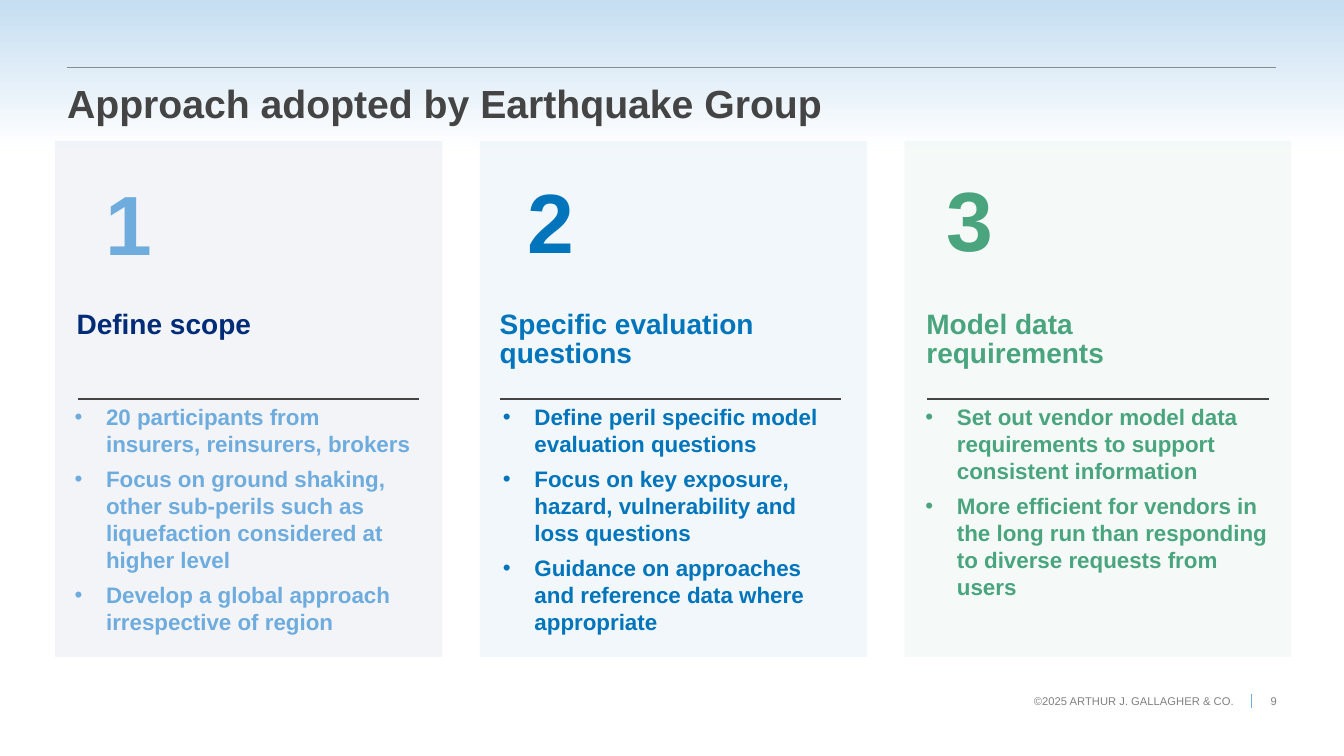
import pptx
import pptx.util
import pptx.dml.color
import pptx.enum.shapes
import pptx.enum.text
import pptx.oxml.ns
from lxml import etree

Pt = pptx.util.Pt
ALIGN = pptx.enum.text.PP_ALIGN
RECTANGLE = pptx.enum.shapes.MSO_SHAPE.RECTANGLE
STRAIGHT = pptx.enum.shapes.MSO_CONNECTOR.STRAIGHT
qn = pptx.oxml.ns.qn
color = pptx.dml.color.RGBColor.from_string

deck = pptx.Presentation()
deck.slide_width, deck.slide_height = Pt(960), Pt(540)
slide = deck.slides.add_slide(deck.slide_layouts[6])


def add_text(box, lines, size, ink, bold=True, align=ALIGN.LEFT, spacing=None, bullets=False, wrap=True):
    """Add a margin-free text box at box = (left, top, width, height), one paragraph per line."""
    frame = slide.shapes.add_textbox(*map(Pt, box)).text_frame
    frame.word_wrap = wrap
    frame.margin_left = frame.margin_top = frame.margin_right = frame.margin_bottom = 0
    for index, line in enumerate(lines):
        paragraph = frame.paragraphs[0] if index == 0 else frame.add_paragraph()
        paragraph.alignment = align
        if spacing:
            paragraph.line_spacing = spacing
        if bullets:
            properties = paragraph._p.get_or_add_pPr()
            properties.set("marL", str(Pt(22.5)))
            properties.set("indent", str(Pt(-22.5)))
            etree.SubElement(properties, qn("a:buFont")).set("typeface", "Arial")
            etree.SubElement(properties, qn("a:buChar")).set("char", "•")
            paragraph.space_after = Pt(6)
        run = paragraph.add_run()
        run.text = line
        run.font.name = "Arial"
        run.font.size = Pt(size)
        run.font.bold = bold
        run.font.color.rgb = color(ink)


def add_rule(x1, y1, x2, y2, ink, weight):
    rule = slide.shapes.add_connector(STRAIGHT, Pt(x1), Pt(y1), Pt(x2), Pt(y2))
    rule.line.color.rgb = color(ink)
    rule.line.width = Pt(weight)
    etree.SubElement(rule._element.spPr, qn("a:effectLst"))


# Sky gradient fading out over the top fifth of the slide
sky = slide.shapes.add_shape(RECTANGLE, 0, 0, Pt(960), Pt(540))
sky.shadow.inherit = False
sky.line.fill.background()
sky.fill.gradient()
sky.fill.gradient_angle = 270
for stop, (position, tint) in zip(sky.fill.gradient_stops, [(0, "C5DEF2"), (0.2, "FFFFFF")]):
    stop.position = position
    stop.color.rgb = color(tint)

# Title and footer
add_rule(48, 48, 911.5, 48, "898D8D", 0.25)
add_text((48, 60.5, 863.5, 38), ["Approach adopted by Earthquake Group"], 28, "444444", spacing=0.9)
add_rule(893.5, 496, 893.5, 506, "6FACDE", 0.5)
add_text((737, 496, 144.5, 9.5), ["©2025 ARTHUR J. GALLAGHER & CO."], 8, "808080",
         bold=False, align=ALIGN.RIGHT, wrap=False)
add_text((902, 496, 10, 9.5), ["9"], 8, "808080", bold=False, align=ALIGN.RIGHT, wrap=False)

# Step cards: card colour, text colour, heading, points,
# number position, heading left and width, points left
steps = [
    ("002C77", "6FACDE", "Define scope",
     ["20 participants from insurers, reinsurers, brokers",
      "Focus on ground shaking, other sub-perils such as liquefaction considered at higher level",
      "Develop a global approach irrespective of region"],
     (55.5, 122.5), (54.75, 252), 53.25),
    ("0075BC", "0075BC", "Specific evaluation questions",
     ["Define peril specific model evaluation questions",
      "Focus on key exposure, hazard, vulnerability and loss questions",
      "Guidance on approaches and reference data where appropriate"],
     (357, 121), (357, 261), 359.25),
    ("4AA57F", "4AA57F", "Model data requirements",
     ["Set out vendor model data requirements to support consistent information",
      "More efficient for vendors in the long run than responding to diverse requests from users"],
     (656, 120), (661.75, 213), 661),
]
for index, (card_ink, text_ink, heading, points, number_at, heading_span, points_left) in enumerate(steps):
    card_left = 39.5 + 303.25 * index
    card = slide.shapes.add_shape(RECTANGLE, Pt(card_left), Pt(100.75), Pt(276.5), Pt(368.5))
    card.shadow.inherit = False
    card.line.fill.background()
    card.fill.solid()
    card.fill.fore_color.rgb = color(card_ink)
    tint = card._element.spPr.find(qn("a:solidFill")).find(qn("a:srgbClr"))
    etree.SubElement(tint, qn("a:alpha")).set("val", "5000")

    heading_left, heading_width = heading_span
    add_text((*number_at, 73.5, 72.75), [str(index + 1)], 60, text_ink, align=ALIGN.CENTER)
    add_text((heading_left, 222.5, heading_width, 42), [heading], 20, card_ink, spacing=0.86)
    rule_left = heading_left + (0 if index == 1 else 0.65)
    add_rule(rule_left, 285, rule_left + 244, 285, "444444", 0.75)
    add_text((points_left, 288, 245, 178), points, 16, text_ink, bullets=True)

deck.save("out.pptx")
